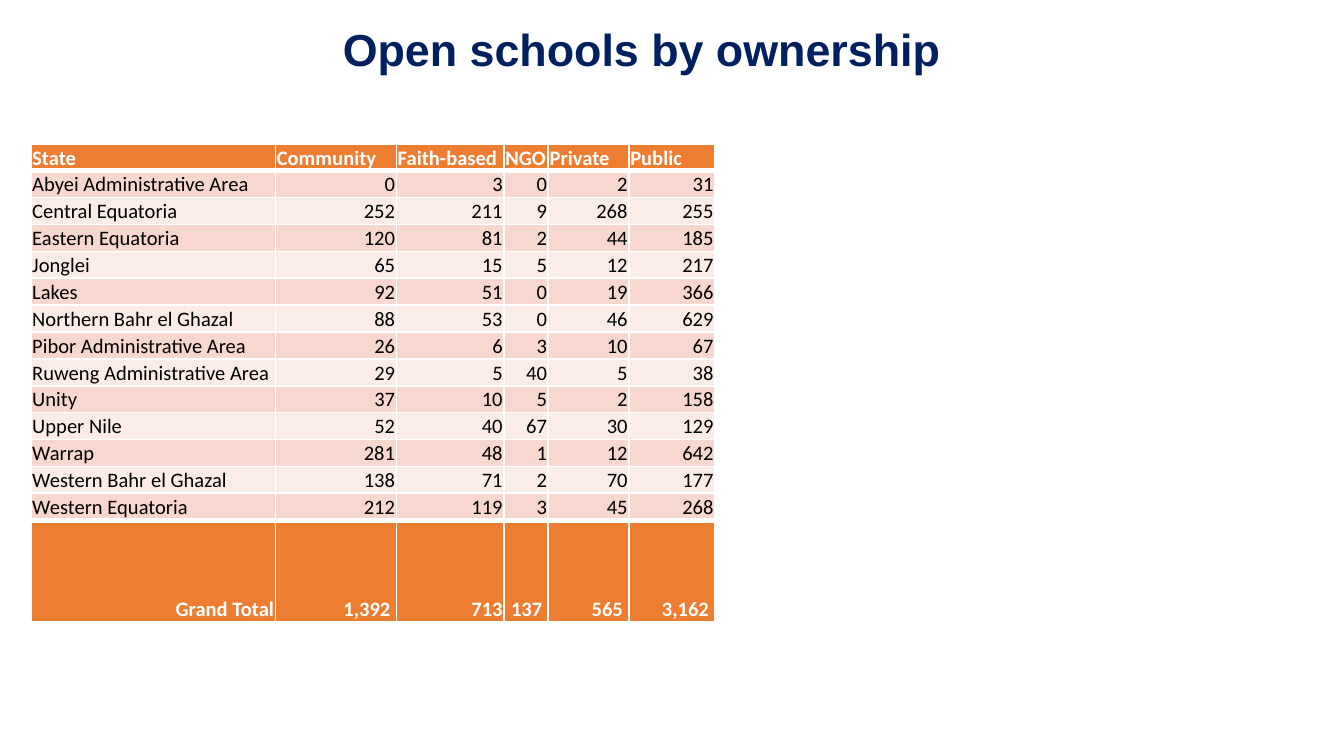
from dataclasses import dataclass

from lxml.etree import SubElement
from pptx import Presentation
from pptx.dml.color import RGBColor
from pptx.enum.text import MSO_ANCHOR as Anchor, PP_ALIGN as Align
from pptx.oxml.ns import qn
from pptx.util import Inches, Pt


@dataclass(frozen=True)
class Theme:
    title_font: str = "Arial"
    table_font: str = "Calibri"
    title_size: int = 24
    table_size: int = 11
    navy: str = "002060"
    orange: str = "ED7D31"
    bands: tuple = ("F8D7CE", "FCECE8")
    white: str = "FFFFFF"
    black: str = "000000"
    thin: int = 1
    thick: int = 3


theme = Theme()


def style_run(r, font, size, color, bold):
    r.font.name = font
    r.font.size = Pt(size)
    r.font.color.rgb = RGBColor.from_string(color)
    r.font.bold = bold


def add_borders(cell, top, bottom):
    """Draw white cell borders; call before the fill, which must follow them in the XML."""
    tc_pr = cell._tc.get_or_add_tcPr()
    widths = {"lnL": theme.thin, "lnR": theme.thin, "lnT": top, "lnB": bottom}
    for tag, width in widths.items():
        line = SubElement(tc_pr, qn(f"a:{tag}"), w=str(Pt(width)))
        fill = SubElement(line, qn("a:solidFill"))
        SubElement(fill, qn("a:srgbClr"), val=theme.white)


prs = Presentation()
prs.slide_width = Inches(10)
prs.slide_height = Inches(10) * 9 // 16
s = prs.slides.add_slide(prs.slide_layouts[6])

# Title
title = s.shapes.add_textbox(Inches(0.17), Inches(0.05), Inches(9.3), Inches(0.68))
tf = title.text_frame
tf.word_wrap = True
tf.vertical_anchor = Anchor.MIDDLE
tf.text = "Open schools by ownership "
p = tf.paragraphs[0]
p.alignment = Align.CENTER
p.line_spacing = 0.9
p.space_after = Pt(6)
style_run(p.runs[0], theme.title_font, theme.title_size, theme.navy, True)

# Schools by state and ownership
rows = [
    ("State", "Community", "Faith-based", "NGO", "Private", "Public"),
    ("Abyei Administrative Area", 0, 3, 0, 2, 31),
    ("Central Equatoria", 252, 211, 9, 268, 255),
    ("Eastern Equatoria", 120, 81, 2, 44, 185),
    ("Jonglei", 65, 15, 5, 12, 217),
    ("Lakes", 92, 51, 0, 19, 366),
    ("Northern Bahr el Ghazal", 88, 53, 0, 46, 629),
    ("Pibor Administrative Area", 26, 6, 3, 10, 67),
    ("Ruweng Administrative Area", 29, 5, 40, 5, 38),
    ("Unity", 37, 10, 5, 2, 158),
    ("Upper Nile", 52, 40, 67, 30, 129),
    ("Warrap", 281, 48, 1, 12, 642),
    ("Western Bahr el Ghazal", 138, 71, 2, 70, 177),
    ("Western Equatoria", 212, 119, 3, 45, 268),
    ("Grand Total", "1,392 ", "713", "137 ", "565 ", "3,162 "),
]
column_widths = [1.82, 0.9, 0.8, 0.33, 0.6, 0.64]
row_height, total_height = 0.2, 0.76
last = len(rows) - 1

table = s.shapes.add_table(
    len(rows), len(column_widths), Inches(0.23), Inches(1.07),
    Inches(sum(column_widths)), Inches(row_height * last + total_height),
).table
table.first_row = table.horz_banding = False
for column, width in zip(table.columns, column_widths):
    column.width = Inches(width)

for i, row in enumerate(rows):
    table.rows[i].height = Inches(total_height if i == last else row_height)
    emphasis = i in (0, last)
    fill_color = theme.orange if emphasis else theme.bands[(i - 1) % 2]
    text_color = theme.white if emphasis else theme.black
    top = theme.thick if i in (1, last) else theme.thin
    bottom = theme.thick if i in (0, last - 1) else theme.thin
    for j, value in enumerate(row):
        cell = table.cell(i, j)
        cell.margin_left = cell.margin_right = cell.margin_top = Inches(0.01)
        cell.margin_bottom = 0
        cell.vertical_anchor = Anchor.BOTTOM
        add_borders(cell, top, bottom)
        cell.fill.solid()
        cell.fill.fore_color.rgb = RGBColor.from_string(fill_color)
        cell.text_frame.text = str(value)
        p = cell.text_frame.paragraphs[0]
        p.alignment = Align.RIGHT if i == last or (i and j) else Align.LEFT
        style_run(p.runs[0], theme.table_font, theme.table_size, text_color, emphasis)

prs.save("out.pptx")
